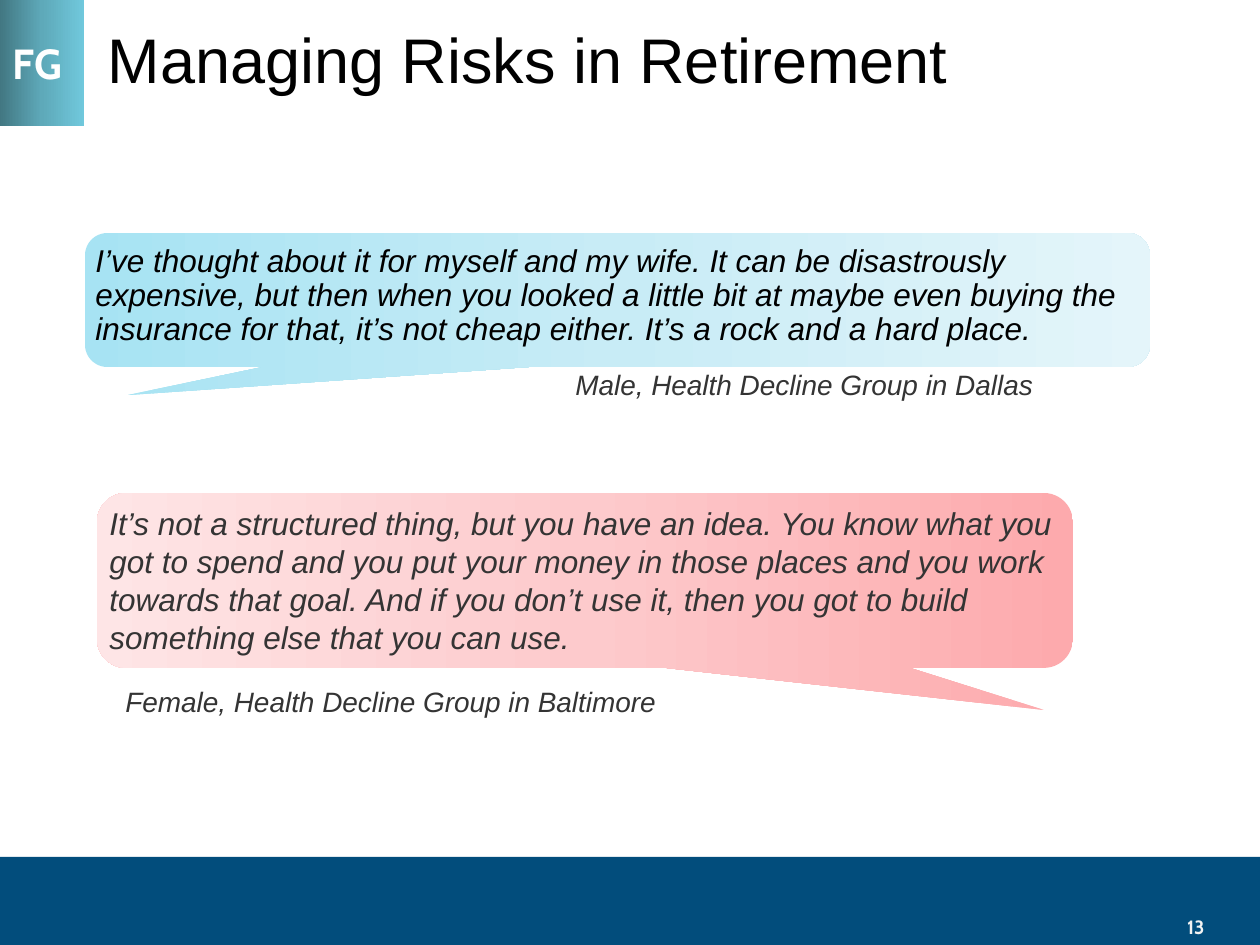
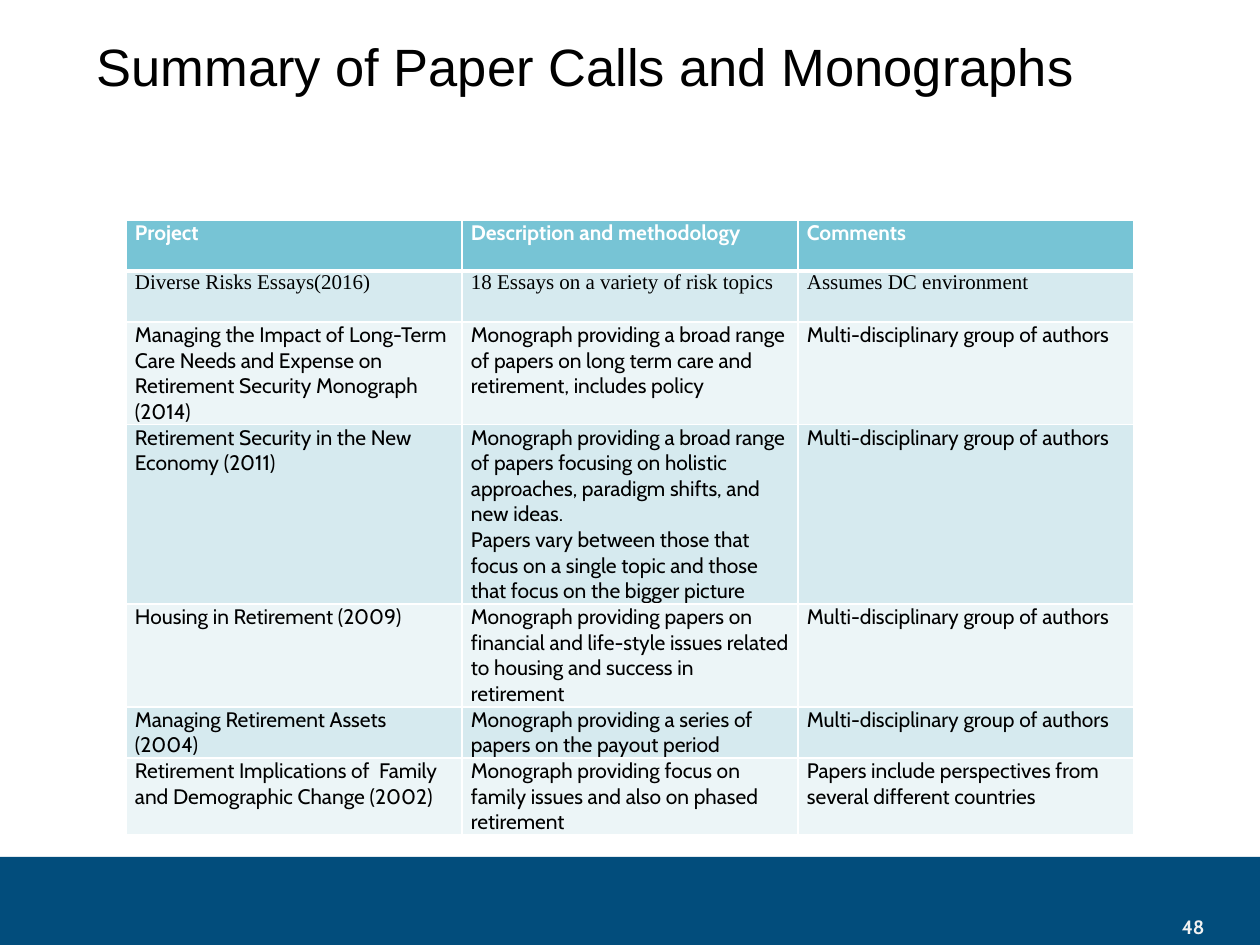
from copy import deepcopy

from lxml import etree
from pptx import Presentation
from pptx import util as u
from pptx.dml.color import RGBColor
from pptx.enum import shapes, text
from pptx.oxml import ns

PX = 914400 / 126  # EMU in one px

BLACK = RGBColor(0x00, 0x00, 0x00)
WHITE = RGBColor(0xFF, 0xFF, 0xFF)
CHARCOAL = RGBColor(0x34, 0x34, 0x34)
NAVY = RGBColor(0x02, 0x4D, 0x7C)
PALE_GRAY = RGBColor(0xF2, 0xF2, 0xF2)
HEADER_TEAL = RGBColor(0x77, 0xC4, 0xD5)
ROW_TINTS = (RGBColor(0xD6, 0xEA, 0xEF), RGBColor(0xEC, 0xF5, 0xF7))
TEAL_FADE = (RGBColor(0x42, 0x77, 0x82), RGBColor(0x5E, 0xA9, 0xB9), RGBColor(0x70, 0xC8, 0xDC))
BLUE_FADE = (RGBColor(0xA7, 0xE3, 0xF3), RGBColor(0xC8, 0xEC, 0xF6), RGBColor(0xE4, 0xF5, 0xFA))
PINK_FADE = (RGBColor(0xFD, 0xAA, 0xAD), RGBColor(0xFD, 0xCA, 0xCC), RGBColor(0xFE, 0xE5, 0xE6))

AUTHORS = "Multi-disciplinary group of authors"
PROJECTS = [
    ("Project", "Description and methodology", "Comments"),
    ("Diverse Risks Essays(2016)", "18 Essays on a variety of risk topics",
     "Assumes DC environment"),
    ("Managing the Impact of Long-Term Care Needs and Expense on Retirement "
     "Security Monograph (2014)",
     "Monograph providing a broad range of papers on long term care and "
     "retirement, includes policy", AUTHORS),
    ("Retirement Security in the New Economy (2011)",
     "Monograph providing a broad range of papers focusing on holistic "
     "approaches, paradigm shifts, and new ideas.\n"
     "Papers vary between those that focus on a single topic and those that "
     "focus on the bigger picture", AUTHORS),
    ("Housing in Retirement (2009)",
     "Monograph providing papers on financial and life-style issues related "
     "to housing and success in retirement", AUTHORS),
    ("Managing Retirement Assets (2004)",
     "Monograph providing a series of papers on the payout period", AUTHORS),
    ("Retirement Implications of  Family and Demographic Change (2002)",
     "Monograph providing focus on family issues and also on phased retirement",
     "Papers include perspectives from several different countries"),
]


def px(*lengths):
    return [u.Emu(round(length * PX)) for length in lengths]


def write(frame, words, size=18, font="Arial", color=BLACK, bold=False, italic=False,
          align=text.PP_ALIGN.LEFT, anchor=text.MSO_ANCHOR.TOP, spacing=1.0):
    """Fill a text frame, one paragraph for each line of words."""
    frame.word_wrap = True
    frame.auto_size = text.MSO_AUTO_SIZE.NONE
    frame.vertical_anchor = anchor
    for number, line in enumerate(words.split("\n")):
        para = frame.add_paragraph() if number else frame.paragraphs[0]
        para.alignment = align
        para.line_spacing = spacing
        span = para.add_run()
        span.text = line
        span.font.size = u.Pt(size)
        span.font.name = font
        span.font.color.rgb = color
        span.font.bold = bold
        span.font.italic = italic


def border(cell, widths):
    """Draw white left, right, top and bottom edges, widths in points."""
    props = cell._tc.get_or_add_tcPr()
    for place, (side, width) in enumerate(zip("LRTB", widths)):
        edge = etree.Element(ns.qn(f"a:ln{side}"), w=str(u.Pt(width)))
        fill = etree.SubElement(edge, ns.qn("a:solidFill"))
        etree.SubElement(fill, ns.qn("a:srgbClr"), val=str(WHITE))
        props.insert(place, edge)


class Pages:
    def __init__(self):
        self.deck = Presentation()
        self.deck.slide_width, self.deck.slide_height = px(1260, 945)
        self.page = None

    def start(self, title, at, size, number):
        """Add a page with its title, footer band and page number."""
        self.page = self.deck.slides.add_slide(self.deck.slide_layouts[5])
        heading = self.page.shapes.title
        heading.left, heading.top, heading.width, heading.height = px(*at)
        write(heading.text_frame, title, size=size, anchor=text.MSO_ANCHOR.MIDDLE, spacing=0.9)
        band = self.shape(shapes.MSO_SHAPE.RECTANGLE, (0, 857, 1260, 88))
        band.fill.solid()
        band.fill.fore_color.rgb = NAVY
        self.label(number, (924, 903, 293, 42), size=11, font="Cabin", color=PALE_GRAY,
                   bold=True, align=text.PP_ALIGN.RIGHT, anchor=text.MSO_ANCHOR.BOTTOM)

    def shape(self, kind, at):
        shape = self.page.shapes.add_shape(kind, *px(*at))
        shape.shadow.inherit = False
        shape.line.fill.background()
        return shape

    def faded(self, kind, at, colors, angle=0):
        shape = self.shape(kind, at)
        shape.fill.gradient()
        shape.fill.gradient_angle = angle
        stops = shape._element.spPr.find(".//" + ns.qn("a:gsLst"))
        stops.append(deepcopy(stops[0]))
        for stop, color, position in zip(shape.fill.gradient_stops, colors, (0, 0.5, 1)):
            stop.color.rgb = color
            stop.position = position
        return shape

    def callout(self, at, tail, colors, angle=0):
        bubble = self.faded(shapes.MSO_SHAPE.ROUNDED_RECTANGULAR_CALLOUT, at, colors, angle)
        bubble.adjustments[0], bubble.adjustments[1] = tail

    def label(self, words, at, **style):
        box = self.page.shapes.add_textbox(*px(*at))
        write(box.text_frame, words, **style)

    def table(self, rows, at, row_height):
        left, top, width = at
        count = len(rows[0])
        frame = self.page.shapes.add_table(
            len(rows), count, *px(left, top, width, row_height * len(rows)))
        for r, row in enumerate(rows):
            for c, words in enumerate(row):
                cell = frame.table.cell(r, c)
                header = r == 0
                cell.margin_left, cell.margin_right, cell.margin_top, cell.margin_bottom = px(9, 9, 0, 0)
                cell.fill.solid()
                cell.fill.fore_color.rgb = HEADER_TEAL if header else ROW_TINTS[(r - 1) % 2]
                border(cell, (1, 1, 3 if r == 1 else 1, 3 if header else 1))
                write(cell.text_frame, words, size=12, bold=header,
                      font="Times New Roman" if r == 1 else "Cabin",
                      color=WHITE if header else BLACK)


def main():
    pages = Pages()

    # Quotes from the focus groups
    pages.start("Managing Risks in Retirement", (95, 0, 1102, 126), 36, "13")
    pages.callout((97, 493, 976, 175), (0.47, 0.74), PINK_FADE, 180)
    pages.callout((85, 233, 1065, 134), (-0.46, 0.71), BLUE_FADE)
    badge = pages.faded(shapes.MSO_SHAPE.RECTANGLE, (0, 0, 84, 126), TEAL_FADE)
    write(badge.text_frame, "FG", size=24, font="Cabin", color=WHITE, bold=True,
          anchor=text.MSO_ANCHOR.MIDDLE)
    pages.label("I’ve thought about it for myself and my wife. It can be disastrously "
                "expensive, but then when you looked a little bit at maybe even buying the "
                "insurance for that, it’s not cheap either. It’s a rock and a hard place.",
                (83, 239, 1067, 125), italic=True, spacing=0.9)
    pages.label("It’s not a structured thing, but you have an idea. You know what you got to "
                "spend and you put your money in those places and you work towards that goal. "
                "And if you don’t use it, then you got to build something else that you can use.",
                (97, 507, 976, 146), color=CHARCOAL, italic=True, anchor=text.MSO_ANCHOR.MIDDLE)
    speaker = dict(size=16, color=CHARCOAL, italic=True)
    pages.label("Male, Health Decline Group in Dallas", (563, 365, 557, 52), spacing=0.9, **speaker)
    pages.label("Female, Health Decline Group in Baltimore", (113, 678, 578, 50), **speaker)

    # Table of paper calls
    pages.start("Summary of Paper Calls and Monographs", (84, 13, 1113, 113), 30, "48")
    pages.table(PROJECTS, (126, 220, 1008), 51)

    pages.deck.save("out.pptx")


if __name__ == "__main__":
    main()
